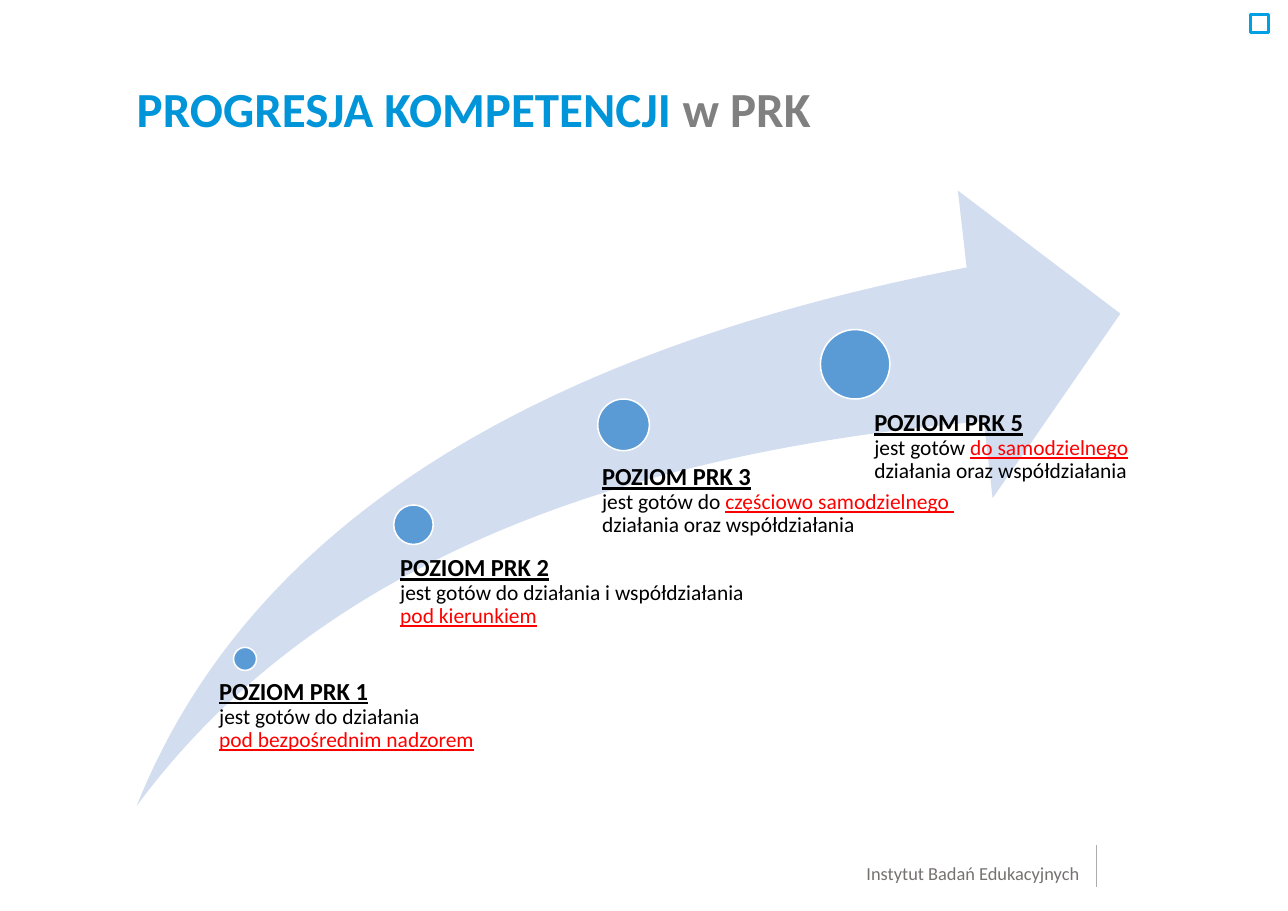
from lxml import etree
from pptx import Presentation
from pptx.dml.color import RGBColor
from pptx.enum.shapes import MSO_CONNECTOR, MSO_SHAPE
from pptx.oxml.ns import qn
from pptx.util import Cm, Pt

SWOOSH = MSO_SHAPE.SWOOSH_ARROW
OVAL = MSO_SHAPE.OVAL
RECT = MSO_SHAPE.RECTANGLE
STRAIGHT = MSO_CONNECTOR.STRAIGHT

THEME = {
    "font": "Calibri",
    "title": "0094D8", "title_end": "808080",
    "arrow": "D2DEEF", "dot": "5B9BD5", "white": "FFFFFF",
    "text": "000000", "accent": "FF0000",
    "footer": "767171", "rule": "AFABAB", "marker": "00A1E4",
    "title_size": 32, "head_size": 16, "body_size": 14, "footer_size": 12,
}

prs = Presentation()
prs.slide_width, prs.slide_height = Cm(29.67), Cm(20.98)
s = prs.slides.add_slide(prs.slide_layouts[6])


def add_shape(kind, x, y, w, h, fill, line=None, weight=1):
    sp = s.shapes.add_shape(kind, Cm(x), Cm(y), Cm(w), Cm(h))
    sp.shadow.inherit = False
    sp.fill.solid()
    sp.fill.fore_color.rgb = RGBColor.from_string(THEME[fill])
    if line:
        sp.line.color.rgb = RGBColor.from_string(THEME[line])
        sp.line.width = Pt(weight)
    else:
        sp.line.fill.background()
    return sp


def add_text(x, y, w, h, lines, spacing=0.9):
    tf = s.shapes.add_textbox(Cm(x), Cm(y), Cm(w), Cm(h)).text_frame
    tf.word_wrap = True
    tf.margin_left = tf.margin_right = tf.margin_top = tf.margin_bottom = 0
    for i, line in enumerate(lines):
        p = tf.add_paragraph() if i else tf.paragraphs[0]
        p.line_spacing = spacing
        for text, size, color, bold, underline in line:
            r = p.add_run()
            r.text = text
            r.font.name = THEME["font"]
            r.font.size = Pt(THEME[size])
            r.font.color.rgb = RGBColor.from_string(THEME[color])
            r.font.bold = bold
            r.font.underline = underline


add_text(19.96, 19.86, 4.95, 0.53,
         [[("Instytut Badań Edukacyjnych", "footer_size", "footer", False, False)]], 1.0)
rule = s.shapes.add_connector(STRAIGHT, Cm(25.25), Cm(20.42), Cm(25.25), Cm(19.46))
rule.line.color.rgb = RGBColor.from_string(THEME["rule"])
rule.line.width = Pt(0.5)
etree.SubElement(rule._element.spPr, qn("a:effectLst"))

add_text(3.15, 1.96, 25.3, 2.8,
         [[("PROGRESJA KOMPETENCJI", "title_size", "title", True, False),
           (" w PRK", "title_size", "title_end", True, False)]])

arrow = add_shape(SWOOSH, 3.15, 4.39, 22.66, 14.17, "arrow")
arrow.adjustments[0] = 0.25
arrow.adjustments[1] = 0.25

PLAIN, MARKED = "text", "accent"
levels = [
    ("POZIOM PRK 1", (5.38, 14.91, 0.53), (5.05, 15.65, 7.34),
     [[("jest gotów do działania", PLAIN)],
      [("pod bezpośrednim nadzorem", MARKED)]]),
    ("POZIOM PRK 2", (9.07, 11.63, 0.91), (9.22, 12.8, 10.03),
     [[("jest gotów do działania i współdziałania", PLAIN)],
      [("pod kierunkiem", MARKED)]]),
    ("POZIOM PRK 3", (13.77, 9.19, 1.19), (13.87, 10.7, 10.39),
     [[("jest gotów do ", PLAIN), ("częściowo samodzielnego ", MARKED)],
      [("działania oraz współdziałania", PLAIN)]]),
    ("POZIOM PRK 5", (18.9, 7.59, 1.6), (20.14, 9.46, 6.81),
     [[("jest gotów ", PLAIN), ("do samodzielnego", MARKED)],
      [("działania oraz współdziałania", PLAIN)]]),
]
for heading, (dot_x, dot_y, dot_size), (x, y, w), body in levels:
    add_shape(OVAL, dot_x, dot_y, dot_size, dot_size, "dot", "white")
    lines = [[(heading, "head_size", PLAIN, True, True)]]
    for line in body:
        lines.append([(text, "body_size", color, False, color == MARKED)
                      for text, color in line])
    add_text(x, y, w, 1.7, lines)

add_shape(RECT, 28.8, 0.33, 0.43, 0.43, "white", "marker", 2)

prs.save("out.pptx")
